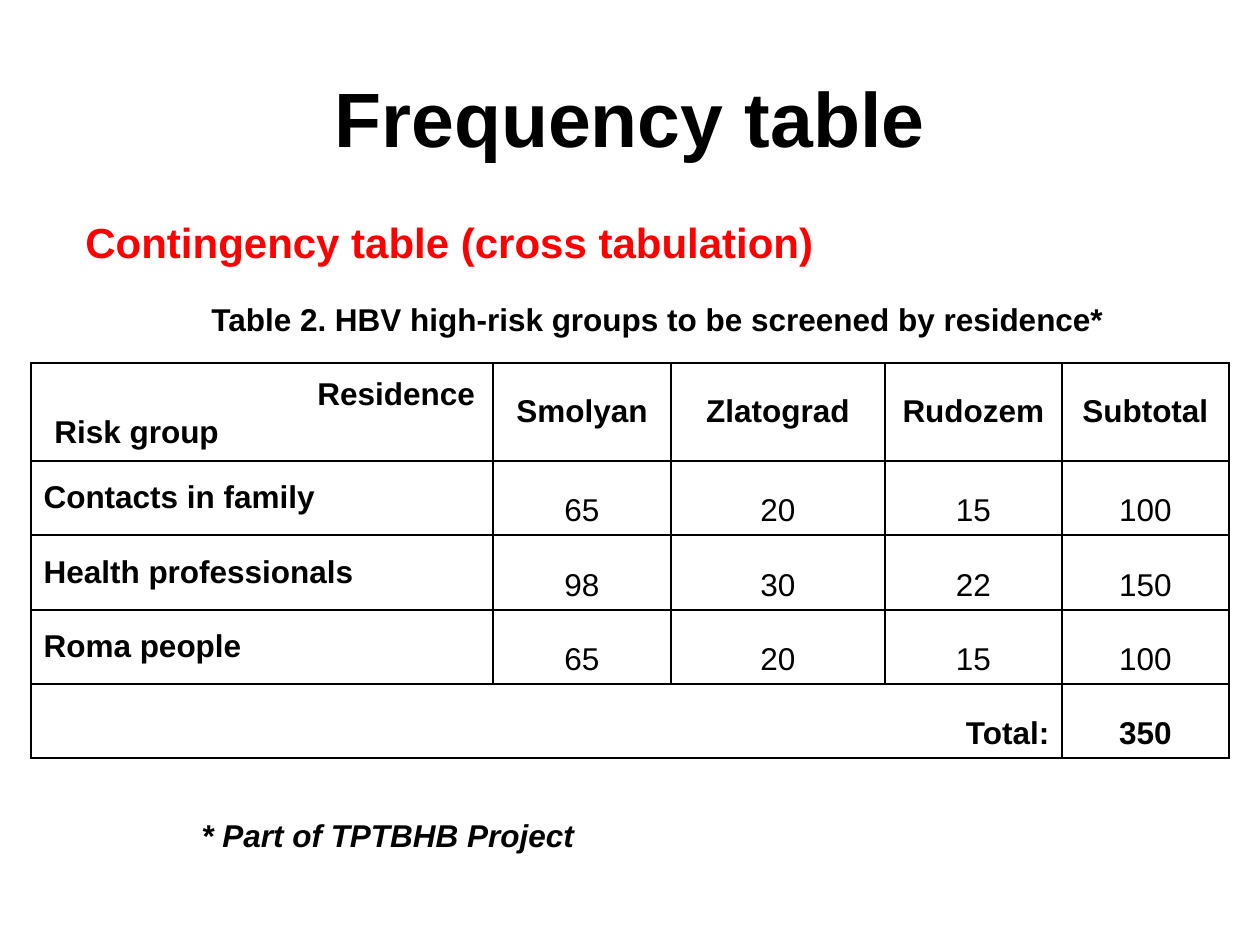
from lxml import etree
from pptx import Presentation
from pptx.dml.color import RGBColor
from pptx.enum.text import MSO_ANCHOR, PP_ALIGN
from pptx.oxml.ns import qn
from pptx.util import Pt

LEFT, CENTER, RIGHT = PP_ALIGN.LEFT, PP_ALIGN.CENTER, PP_ALIGN.RIGHT
TOP, MIDDLE, BOTTOM = MSO_ANCHOR.TOP, MSO_ANCHOR.MIDDLE, MSO_ANCHOR.BOTTOM
EMU_PER_PX = 914400 / 126


def px(length):
    return round(length * EMU_PER_PX)


def write(frame, text, size=18, color="000000", bold=True, italic=False, align=LEFT):
    """Set one paragraph of Arial text in a text frame."""
    frame.text = text
    para = frame.paragraphs[0]
    para.alignment = align
    font = para.runs[0].font
    font.name, font.size = "Arial", Pt(size)
    font.bold, font.italic = bold, italic
    font.color.rgb = RGBColor.from_string(color)


deck = Presentation()
deck.slide_width, deck.slide_height = px(1260), px(945)
page = deck.slides.add_slide(deck.slide_layouts[6])

# Frequency table with borders on every cell
rows = [
    ["", "Smolyan", "Zlatograd", "Rudozem", "Subtotal"],
    ["Contacts in family", "65", "20", "15", "100"],
    ["Health professionals", "98", "30", "22", "150"],
    ["Roma people", "65", "20", "15", "100"],
    ["Total:", "", "", "", "350"],
]
widths = [462, 178, 214, 177, 167]
heights = [98, 74, 75, 74, 74]
last = len(rows) - 1
table = page.shapes.add_table(
    len(rows), len(widths), px(31), px(363), px(sum(widths)), px(sum(heights))
).table
table.first_row = table.horz_banding = False
for column, width in zip(table.columns, widths):
    column.width = px(width)
for row, height in zip(table.rows, heights):
    row.height = px(height)
table.cell(last, 0).merge(table.cell(last, 3))

for r, values in enumerate(rows):
    for c, value in enumerate(values):
        cell = table.cell(r, c)
        cell_props = cell._tc.get_or_add_tcPr()
        for side in ("a:lnL", "a:lnR", "a:lnT", "a:lnB"):
            line = etree.SubElement(cell_props, qn(side), w=str(Pt(1)))
            fill = etree.SubElement(line, qn("a:solidFill"))
            etree.SubElement(fill, qn("a:srgbClr"), val="000000")
        cell.fill.background()
        is_label = r == 0 or (c == 0 and r < last)
        cell.vertical_anchor = MIDDLE if is_label else BOTTOM
        if value:
            align = CENTER if c else RIGHT if r == last else LEFT
            write(cell.text_frame, value, bold=is_label or r == last, align=align)

# Title, captions and the two labels of the split header cell
texts = [
    ("Frequency table", (63, 38, 1134, 157), MIDDLE, {"size": 44, "align": CENTER}),
    ("Table 2. HBV high-risk groups to be screened by residence*",
     (199, 294, 987, 50), TOP, {}),
    ("* Part of TPTBHB Project", (189, 810, 838, 50), TOP, {"italic": True}),
    ("Contingency table (cross tabulation)", (73, 210, 753, 63), TOP,
     {"size": 24, "color": "FF0000"}),
    ("Residence", (305, 368, 199, 50), TOP, {}),
    ("Risk group", (42, 406, 199, 50), TOP, {}),
]
for text, place, anchor, style in texts:
    box = page.shapes.add_textbox(*map(px, place))
    box.text_frame.word_wrap = True
    box.text_frame.vertical_anchor = anchor
    write(box.text_frame, text, **style)

deck.save("out.pptx")
